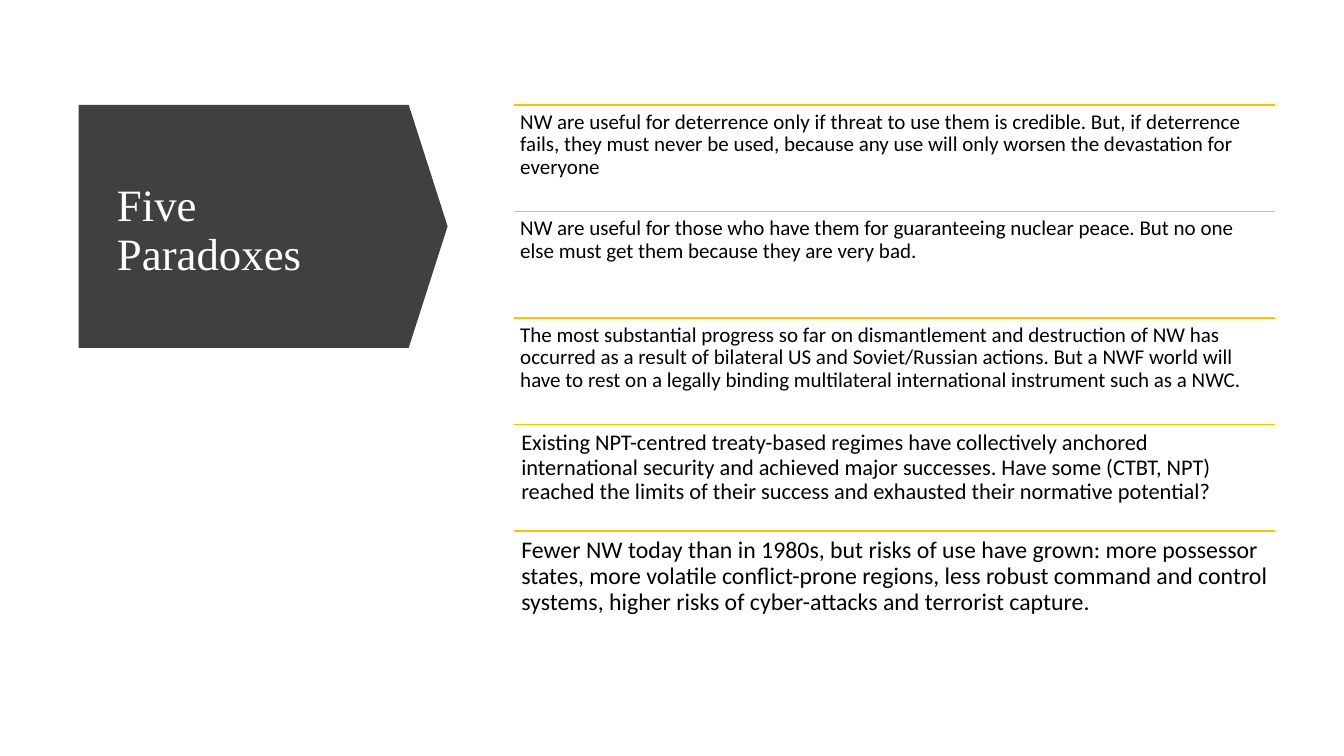
from lxml import etree
from pptx import Presentation
from pptx.dml.color import RGBColor
from pptx.enum.shapes import MSO_CONNECTOR, MSO_SHAPE
from pptx.enum.text import MSO_ANCHOR, MSO_AUTO_SIZE, PP_ALIGN
from pptx.oxml.ns import qn
from pptx.util import Inches, Pt

STRAIGHT = MSO_CONNECTOR.STRAIGHT
PENTAGON = MSO_SHAPE.PENTAGON
MIDDLE, TOP = MSO_ANCHOR.MIDDLE, MSO_ANCHOR.TOP
NO_AUTOFIT = MSO_AUTO_SIZE.NONE
LEFT = PP_ALIGN.LEFT

COLORS = {"banner": "404040", "title": "FFFFFF", "rule": "FFC000", "text": "000000"}

LIST_LEFT, LIST_TOP, LIST_WIDTH = 5.1, 1.04, 7.55
ROW_HEIGHT = 1.057

# Text, font size in points, inset in inches
PARADOXES = [
    ("NW are useful for deterrence only if threat to use them is credible. But, if "
     "deterrence fails, they must never be used, because any use will only worsen "
     "the devastation for everyone", 15, 0.06),
    ("NW are useful for those who have them for guaranteeing nuclear peace. But no "
     "one else must get them because they are very bad.", 15, 0.06),
    ("The most substantial progress so far on dismantlement and destruction of NW "
     "has occurred as a result of bilateral US and Soviet/Russian actions. But a "
     "NWF world will have to rest on a legally binding multilateral international "
     "instrument such as a NWC.", 15, 0.06),
    ("Existing NPT-centred treaty-based regimes have collectively anchored "
     "international security and achieved major successes. Have some (CTBT, NPT) "
     "reached the limits of their success and exhausted their normative "
     "potential?", 16, 0.07),
    ("Fewer NW today than in 1980s, but risks of use have grown: more possessor "
     "states, more volatile conflict-prone regions, less robust command and control "
     "systems, higher risks of cyber-attacks and terrorist capture.", 17, 0.07),
]


def rgb(name):
    return RGBColor.from_string(COLORS[name])


def write(tf, text, size, font, color, anchor, inset_x, inset_y):
    tf.word_wrap = True
    tf.auto_size = NO_AUTOFIT
    tf.vertical_anchor = anchor
    tf.margin_left = tf.margin_right = Inches(inset_x)
    tf.margin_top = tf.margin_bottom = Inches(inset_y)
    tf.text = text
    p = tf.paragraphs[0]
    p.alignment = LEFT
    p.line_spacing = 0.9
    p.font.size = Pt(size)
    p.font.name = font
    p.font.color.rgb = rgb(color)


def add_title_banner(slide):
    """Put the title on a pentagon that lies behind it."""
    title = slide.shapes.title
    title.left, title.top = Inches(1.06), Inches(1.32)
    title.width, title.height = Inches(2.92), Inches(1.95)
    write(title.text_frame, "Five Paradoxes", 32, "Times New Roman", "title",
          MIDDLE, 0.1, 0.05)

    banner = slide.shapes.add_shape(
        PENTAGON, Inches(0.78), Inches(1.04), Inches(3.66), Inches(2.41))
    banner.adjustments[0] = 0.16
    banner.shadow.inherit = False
    banner.fill.solid()
    banner.fill.fore_color.rgb = rgb("banner")
    banner.line.fill.background()
    title.element.addprevious(banner.element)


def add_rule(slide, top):
    line = slide.shapes.add_connector(
        STRAIGHT, Inches(LIST_LEFT), Inches(top),
        Inches(LIST_LEFT + LIST_WIDTH), Inches(top))
    line.line.color.rgb = rgb("rule")
    line.line.width = Pt(1)
    etree.SubElement(line.element.spPr, qn("a:effectLst"))


def add_paradox(slide, top, text, size, inset):
    add_rule(slide, top)
    box = slide.shapes.add_textbox(
        Inches(LIST_LEFT), Inches(top), Inches(LIST_WIDTH), Inches(ROW_HEIGHT))
    write(box.text_frame, text, size, "Calibri", "text", TOP, inset, inset)


def main():
    prs = Presentation()
    prs.slide_width, prs.slide_height = Inches(13.33), Inches(7.5)
    slide = prs.slides.add_slide(prs.slide_layouts.get_by_name("Title Only"))
    add_title_banner(slide)
    for i, (text, size, inset) in enumerate(PARADOXES):
        add_paradox(slide, LIST_TOP + i * ROW_HEIGHT, text, size, inset)
    prs.save("out.pptx")


if __name__ == "__main__":
    main()
